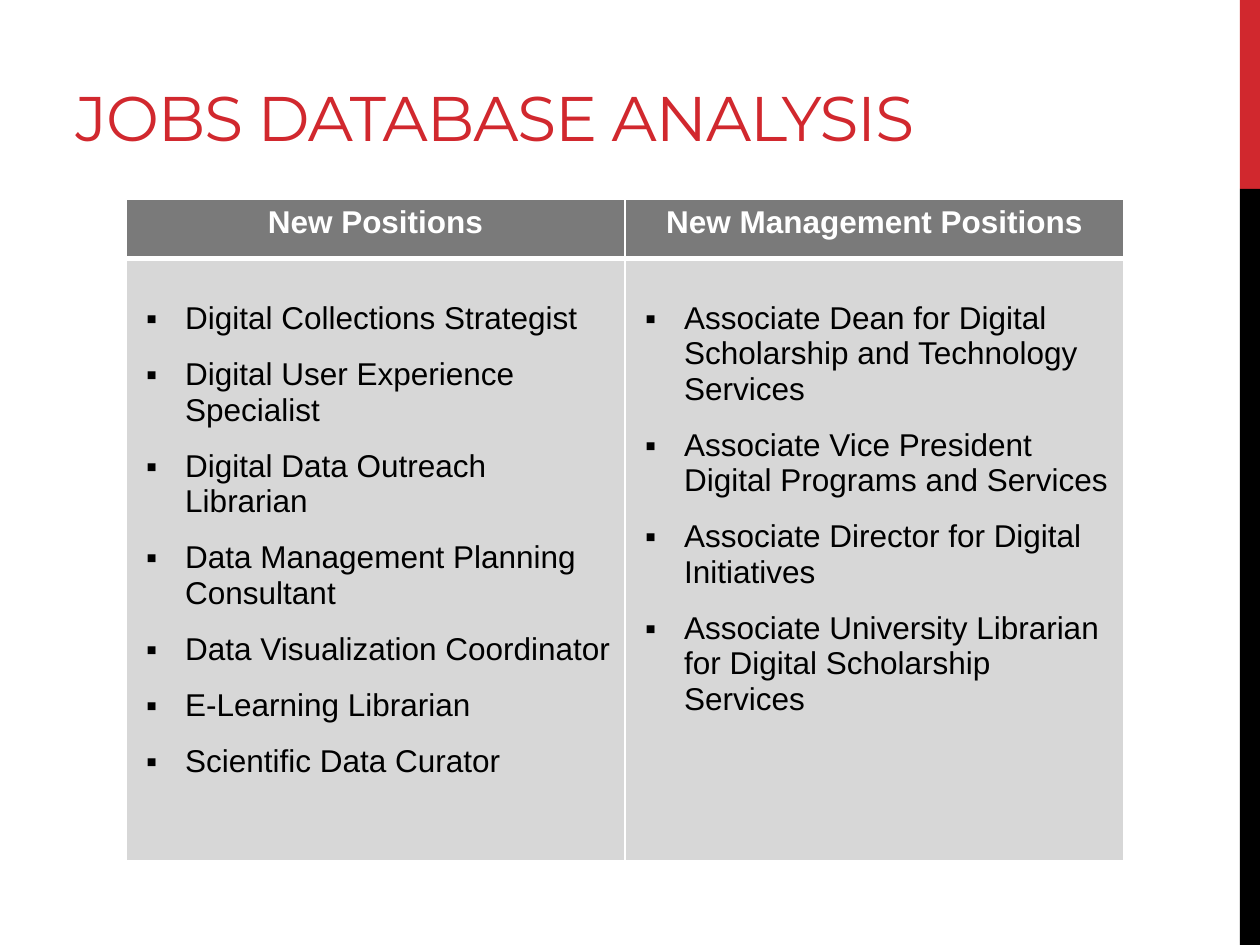
from dataclasses import dataclass
from lxml.etree import SubElement
from pptx import Presentation
from pptx.dml.color import RGBColor
from pptx.enum.shapes import MSO_SHAPE
from pptx.enum.text import MSO_ANCHOR, PP_ALIGN
from pptx.oxml.ns import qn
from pptx.util import Inches, Pt

COLS, ROWS = 100, 75


@dataclass(frozen=True)
class Theme:
    """Colours, fonts and type sizes of the slide."""
    red: str = "D1282E"
    black: str = "000000"
    white: str = "FFFFFF"
    head: str = "7A7A7A"
    body: str = "D7D7D7"
    title: str = "Montserrat"
    text: str = "Arial"
    large: int = 36
    small: int = 18


def put(item, form):
    """Set each format value on an item."""
    for name, value in form.items():
        setattr(item, name, value)


def paint(fill, tone):
    """Give a fill one solid colour."""
    fill.solid()
    fill.fore_color.rgb = RGBColor.from_string(tone)


class Deck:
    """Holds the style and the current slide."""

    def __init__(self, theme):
        """Open a title-only slide."""
        self.theme = theme
        self.file = Presentation()
        put(self.file, {"slide_width": Inches(10), "slide_height": Inches(7.5)})
        self.slide = self.file.slides.add_slide(self.file.slide_layouts[5])

    def box(self, left, top, width, height):
        """Turn grid columns and rows into lengths."""
        wide = self.file.slide_width / COLS
        high = self.file.slide_height / ROWS
        return [round(n * unit) for n, unit in
                zip((left, top, width, height), (wide, high, wide, high))]

    def label(self, para, text, tone, form):
        """Add one formatted run to a paragraph."""
        run = para.add_run()
        run.text = text
        put(run.font, form)
        run.font.color.rgb = RGBColor.from_string(tone)
        return run

    def title(self, text, place):
        """Fill and move the title placeholder."""
        shape = self.slide.shapes.title
        put(shape, dict(zip(("left", "top", "width", "height"), self.box(*place))))
        put(shape.text_frame, {"vertical_anchor": MSO_ANCHOR.MIDDLE, "word_wrap": True})
        para = shape.text_frame.paragraphs[0]
        para.alignment = PP_ALIGN.LEFT
        form = {"name": self.theme.title, "size": Pt(self.theme.large)}
        run = self.label(para, text, self.theme.red, form)
        run.font._element.set("spc", "-60")

    def bar(self, place, tone):
        """Draw a plain filled bar."""
        shape = self.slide.shapes.add_shape(MSO_SHAPE.RECTANGLE, *self.box(*place))
        shape.shadow.inherit = False
        paint(shape.fill, tone)
        shape.line.fill.background()

    def edge(self, cell, widths):
        """Draw the white sides of a cell."""
        props = cell._tc.get_or_add_tcPr()
        for side, width in widths.items():
            line = SubElement(props, qn(f"a:ln{side}"), w=str(Pt(width)))
            fill = SubElement(line, qn("a:solidFill"))
            SubElement(fill, qn("a:srgbClr"), val=self.theme.white)

    def bullet(self, para):
        """Give a paragraph a square bullet and hanging indent."""
        props = para._p.get_or_add_pPr()
        props.set("marL", str(Inches(0.37)))
        props.set("indent", str(Inches(-0.31)))
        SubElement(props, qn("a:buFont"), typeface=self.theme.text)
        SubElement(props, qn("a:buChar"), char="▪")

    def table(self, lists, place, heights):
        """Build a table with one headed list per column."""
        look = self.theme
        grid = self.slide.shapes.add_table(2, len(lists), *self.box(*place)).table
        for row, height in zip(grid.rows, heights):
            row.height = self.box(0, 0, 0, height)[3]
        form = {"name": look.text, "size": Pt(look.small)}
        for col, (name, items) in enumerate(lists.items()):
            head, body = grid.cell(0, col), grid.cell(1, col)
            self.edge(head, {"L": 1, "R": 1, "T": 1, "B": 3})
            self.edge(body, {"L": 1, "R": 1, "T": 3, "B": 1})
            paint(head.fill, look.head)
            paint(body.fill, look.body)
            para = head.text_frame.paragraphs[0]
            para.alignment = PP_ALIGN.CENTER
            self.label(para, name, look.white, {**form, "bold": True})
            body.margin_top = Inches(0.34)
            for spot, item in enumerate(items):
                frame = body.text_frame
                para = frame.add_paragraph() if spot else frame.paragraphs[0]
                para.space_after = Pt(12)
                self.bullet(para)
                self.label(para, item, look.black, {**form, "bold": False})


JOBS = {
    "New Positions": [
        "Digital Collections Strategist",
        "Digital User Experience Specialist",
        "Digital Data Outreach Librarian",
        "Data Management Planning Consultant",
        "Data Visualization Coordinator",
        "E-Learning Librarian",
        "Scientific Data Curator",
    ],
    "New Management Positions": [
        "Associate Dean for Digital Scholarship and Technology Services",
        "Associate Vice President Digital Programs and Services",
        "Associate Director for Digital Initiatives",
        "Associate University Librarian for Digital Scholarship Services",
    ],
}


def main():
    """Build and save the slide."""
    deck = Deck(Theme())
    deck.bar((98.4, 0, 1.6, 15), deck.theme.red)
    deck.bar((98.4, 15, 1.6, 60), deck.theme.black)
    deck.title("JOBS DATABASE ANALYSIS", (5, 1.7, 90, 15))
    deck.table(JOBS, (10, 15.8, 79.2, 52.5), (4.7, 47.8))
    deck.file.save("out.pptx")


if __name__ == "__main__":
    main()
